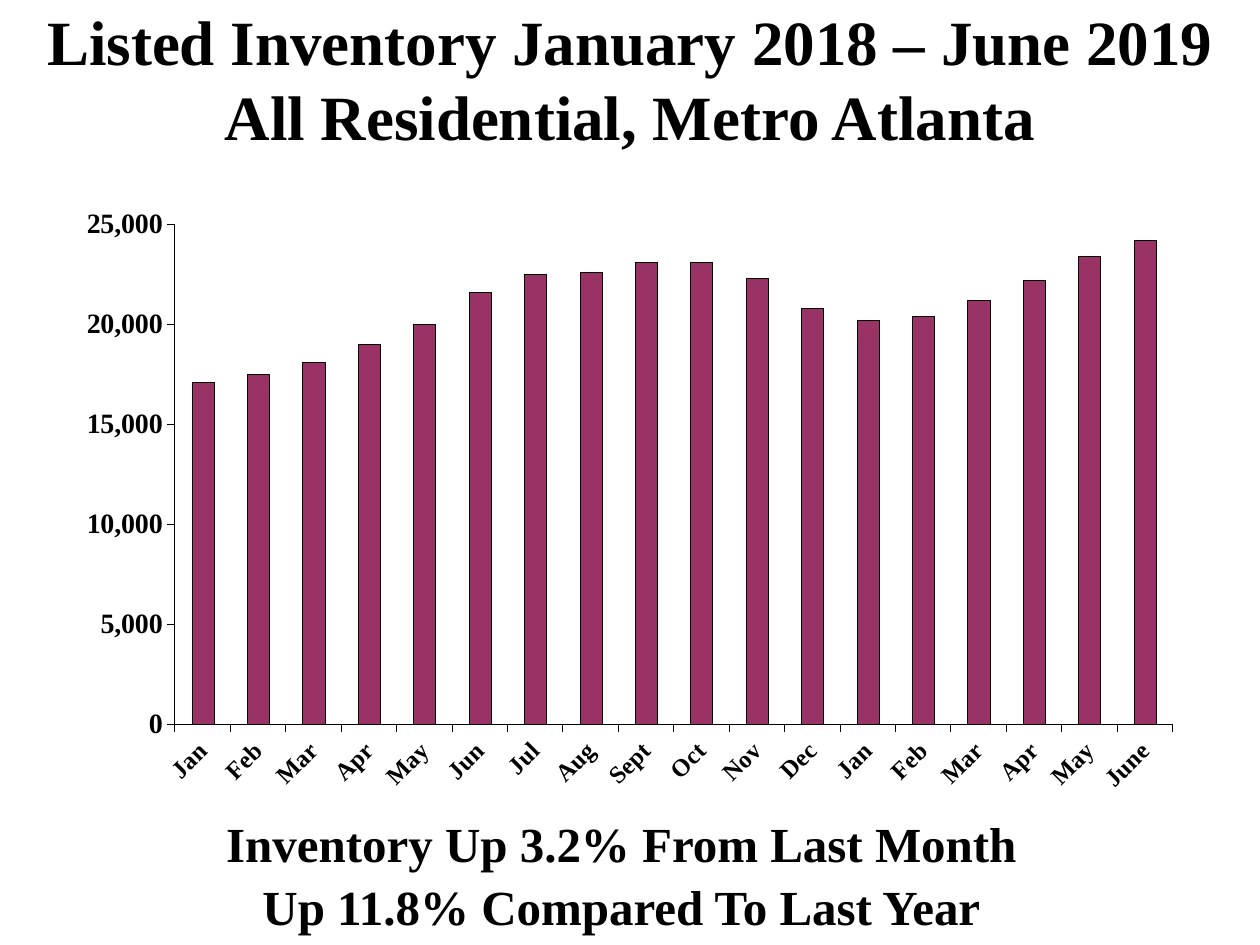
from lxml import etree
from pptx import Presentation
from pptx import util as u
from pptx.chart.data import CategoryChartData
from pptx.dml.color import RGBColor
from pptx.enum import chart as ch, text
from pptx.oxml.ns import qn

COLORS = {"ink": "000000", "bar": "993366"}
FONT = "Times New Roman"
INK = RGBColor.from_string(COLORS["ink"])

prs = Presentation()
prs.slide_width, prs.slide_height = u.Cm(25.4), u.Cm(19.05)
s = prs.slides.add_slide(prs.slide_layouts[6])


def style(font, size):
    font.name, font.size, font.bold = FONT, u.Pt(size), True
    font.color.rgb = INK


def add_lines(top, height, lines, size):
    tf = s.shapes.add_textbox(0, u.Cm(top), prs.slide_width, u.Cm(height)).text_frame
    tf.word_wrap = True
    tf.text = "\n".join(lines)
    for p in tf.paragraphs:
        p.alignment = text.PP_ALIGN.CENTER
        style(p.runs[0].font, size)
    return tf


# Title
tf = add_lines(0.2, 2.74, ["Listed Inventory January 2018 – June 2019",
                           "All Residential, Metro Atlanta"], 36)
tf.vertical_anchor = text.MSO_ANCHOR.MIDDLE

# Inventory chart
data = CategoryChartData(number_format="#,##0")
data.categories = ["Jan", "Feb", "Mar", "Apr", "May", "Jun", "Jul", "Aug", "Sept",
                   "Oct", "Nov", "Dec", "Jan", "Feb", "Mar", "Apr", "May", "June"]
data.add_series("Series 1", [17100, 17500, 18100, 19000, 20000, 21600, 22500, 22600, 23100,
                             23100, 22300, 20800, 20200, 20400, 21200, 22200, 23400, 24200])
chart = s.shapes.add_chart(ch.XL_CHART_TYPE.COLUMN_CLUSTERED, u.Cm(1.07), u.Cm(3.28),
                           u.Cm(22.96), u.Cm(14.07), data).chart
chart.has_legend = chart.has_title = False
style(chart.font, 14)

plot = chart.plots[0]
plot.gap_width = 150
plot.vary_by_categories = False
bars = plot.series[0].format
bars.fill.solid()
bars.fill.fore_color.rgb = RGBColor.from_string(COLORS["bar"])
bars.line.color.rgb = INK
bars.line.width = u.Pt(0.06)

# Axes
for axis, size in ((chart.category_axis, 14), (chart.value_axis, 16)):
    axis.has_major_gridlines = False
    axis.major_tick_mark = ch.XL_TICK_MARK.OUTSIDE
    axis.minor_tick_mark = ch.XL_TICK_MARK.NONE
    axis.format.line.color.rgb = INK
    axis.format.line.width = u.Pt(0.01)
    style(axis.tick_labels.font, size)
chart.category_axis.tick_label_position = ch.XL_TICK_LABEL_POSITION.LOW
chart.category_axis._element.find(qn("c:txPr")).find(qn("a:bodyPr")).set("rot", "-2700000")
axis = chart.value_axis
axis.minimum_scale, axis.maximum_scale, axis.major_unit = 0, 25000, 5000
axis.tick_labels.number_format = "#,##0"
axis.tick_labels.number_format_is_linked = False

# Fixed inner plot area
area = chart._chartSpace.chart.plotArea
for old in area.findall(qn("c:layout")):
    area.remove(old)
layout = etree.Element(qn("c:layout"))
area.insert(0, layout)
manual = etree.SubElement(layout, qn("c:manualLayout"))
for tag, val in (("layoutTarget", "inner"), ("xMode", "edge"), ("yMode", "edge"),
                 ("x", "0.107"), ("y", "0.088"), ("w", "0.876"), ("h", "0.717")):
    etree.SubElement(manual, qn("c:" + tag)).set("val", val)

# Summary
tf = add_lines(16.08, 2.54, ["Inventory Up 3.2% From Last Month",
                             "Up 11.8% Compared To Last Year"], 28)
tf.vertical_anchor = text.MSO_ANCHOR.TOP
tf.margin_top, tf.margin_right = u.Cm(0.46), u.Cm(0.6)
for p in tf.paragraphs:
    p.line_spacing = 0.9
tf.paragraphs[1].space_before = u.Pt(5.6)

prs.save("out.pptx")
